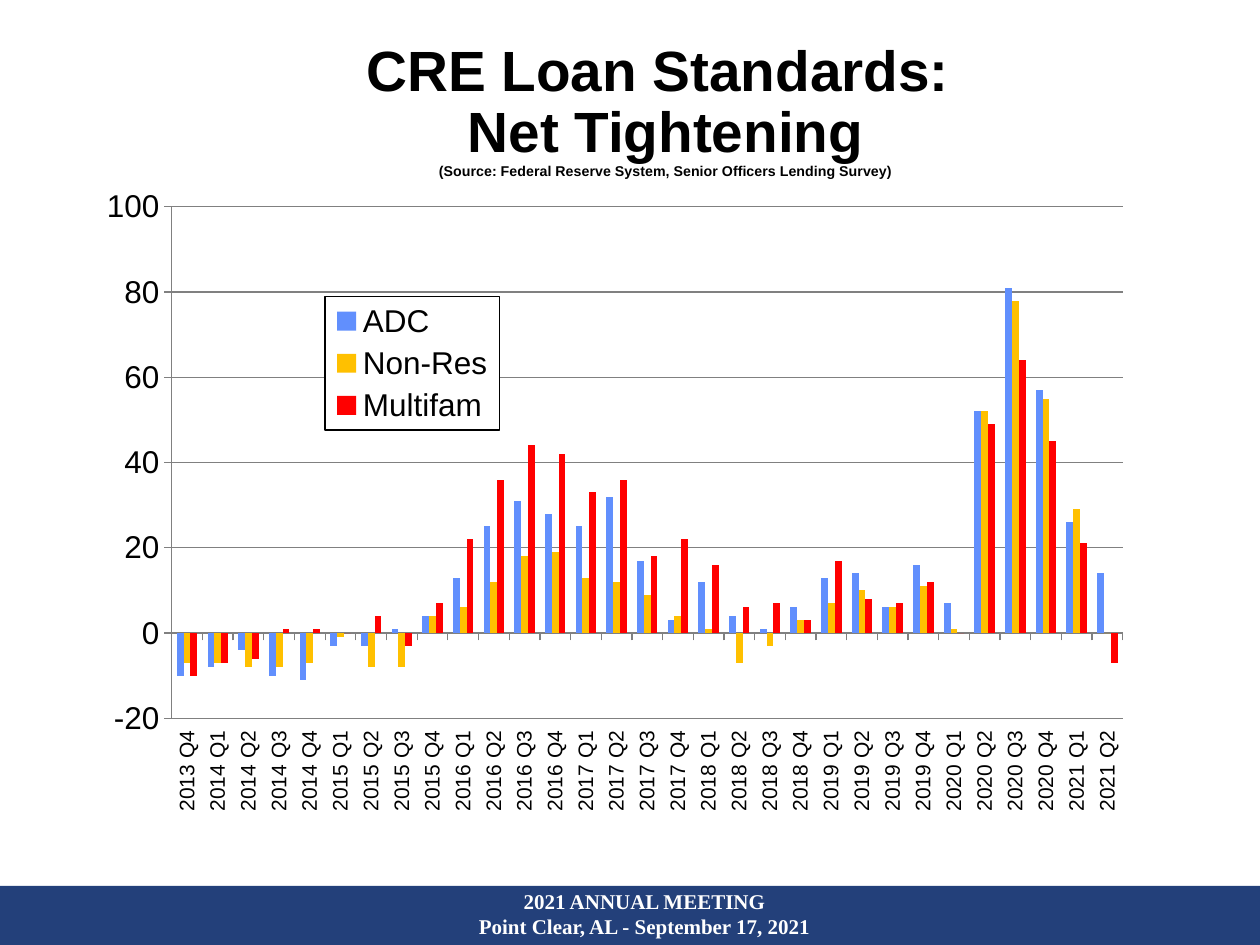
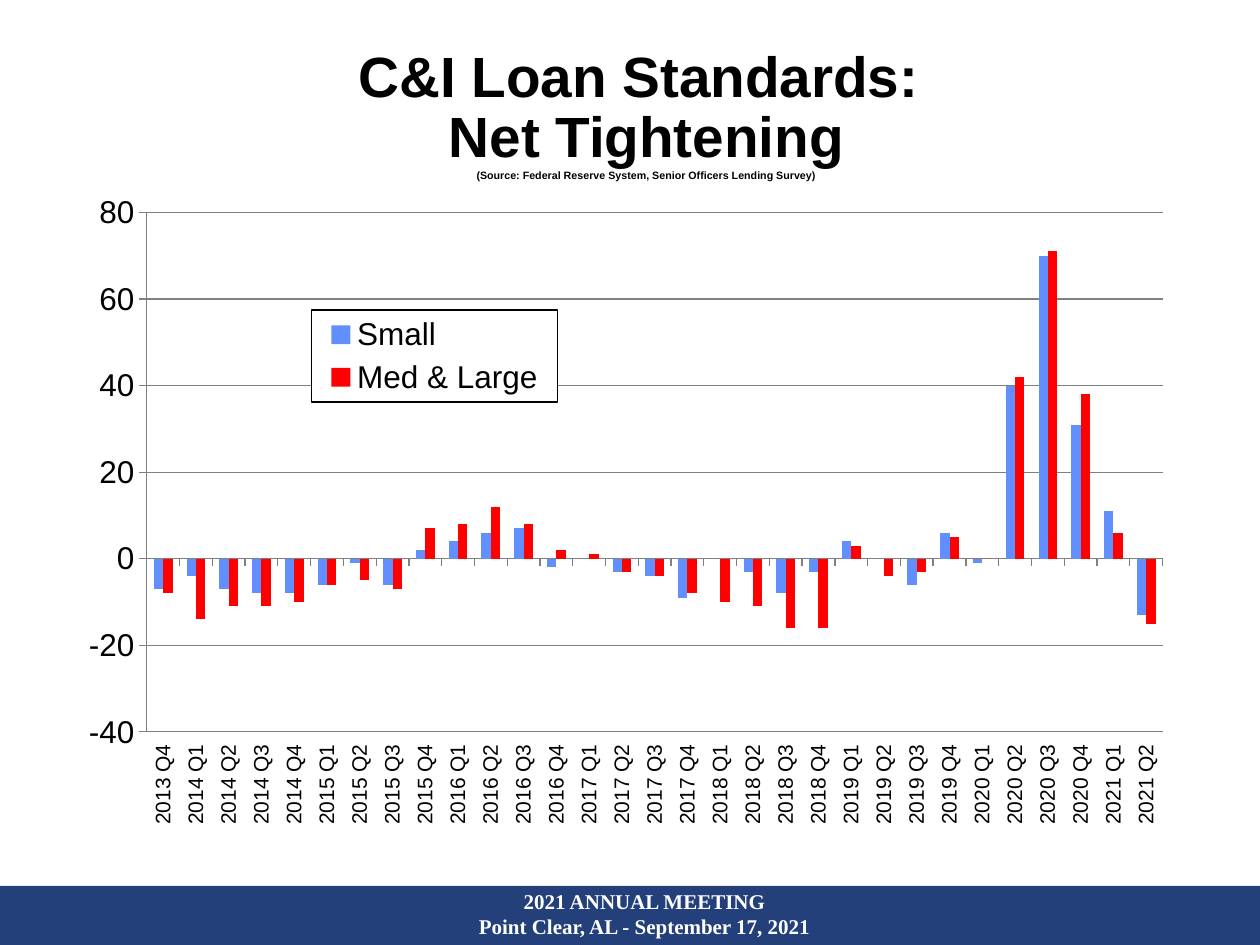
from dataclasses import dataclass

from lxml.etree import SubElement
from pptx import Presentation
from pptx.chart.data import CategoryChartData as ChartData
from pptx.dml.color import RGBColor as RGB
from pptx.enum.chart import XL_CHART_TYPE as Kind
from pptx.enum.chart import XL_LEGEND_POSITION as Side
from pptx.enum.chart import XL_TICK_LABEL_POSITION as Label
from pptx.enum.chart import XL_TICK_MARK as Tick
from pptx.enum.shapes import MSO_SHAPE as Shape
from pptx.enum.text import MSO_ANCHOR as Anchor
from pptx.enum.text import PP_ALIGN as Align
from pptx.oxml import parse_xml
from pptx.oxml.ns import nsdecls, qn
from pptx.util import Emu, Pt


@dataclass(frozen=True)
class Theme:
    """Colours, fonts and type sizes that the slides share."""
    ink: str = "000000"
    paper: str = "FFFFFF"
    band: str = "23407A"
    rule: str = "808080"
    blue: str = "618FFD"
    gold: str = "FFC000"
    red: str = "FF0000"
    sans: str = "Arial"
    serif: str = "Times New Roman"
    head: float = 32.4
    foot: int = 12
    key: int = 18
    tick: int = 12


THEME = Theme()
SCALE = 914400 / 126
WIDE, HIGH = 1260, 945
PLOT_X, PLOT_W, PLOT_H = 0.082, 0.888, 0.773
SOURCE = "(Source: Federal Reserve System, Senior Officers Lending Survey)"
FOOTER = ("2021 ANNUAL MEETING", "Point Clear, AL - September 17, 2021")
TERMS = [f"{year} Q{part}" for year in range(2013, 2022) for part in range(1, 5)][3:-2]

REAL = (
    ("ADC ", THEME.blue,
     (-10, -8, -4, -10, -11, -3, -3, 1, 4, 13, 25, 31, 28, 25, 32, 17, 3, 12, 4, 1,
      6, 13, 14, 6, 16, 7, 52, 81, 57, 26, 14)),
    ("Non-Res", THEME.gold,
     (-7, -7, -8, -8, -7, -1, -8, -8, 4, 6, 12, 18, 19, 13, 12, 9, 4, 1, -7, -3,
      3, 7, 10, 6, 11, 1, 52, 78, 55, 29, 0)),
    ("Multifam", THEME.red,
     (-10, -7, -6, 1, 1, 0, 4, -3, 7, 22, 36, 44, 42, 33, 36, 18, 22, 16, 6, 7,
      3, 17, 8, 7, 12, 0, 49, 64, 45, 21, -7)),
)
TRADE = (
    ("Small ", THEME.blue,
     (-7, -4, -7, -8, -8, -6, -1, -6, 2, 4, 6, 7, -2, 0, -3, -4, -9, 0, -3, -8,
      -3, 4, 0, -6, 6, -1, 40, 70, 31, 11, -13)),
    ("Med & Large", THEME.red,
     (-8, -14, -11, -11, -10, -6, -5, -7, 7, 8, 12, 8, 2, 1, -3, -4, -8, -10, -11, -16,
      -16, 3, -4, -3, 5, 0, 42, 71, 38, 6, -15)),
)


def px(*spans):
    """Turn px lengths into EMU."""
    return [Emu(round(span * SCALE)) for span in spans]


def style(font, size, name=THEME.sans, tint=THEME.ink, bold=False):
    """Set the face of a font."""
    font.size, font.name, font.bold = Pt(size), name, bold
    font.color.rgb = RGB.from_string(tint)


def add_box(slide, box):
    """Add a wrapping text box and return its frame."""
    frame = slide.shapes.add_textbox(*px(*box)).text_frame
    frame.word_wrap = True
    return frame


def add_run(para, text, *face, **more):
    """Add one styled run to a paragraph."""
    run = para.add_run()
    run.text = text
    style(run.font, *face, bold=True, **more)


def add_title(slide, box, topic, small):
    """Write the two title lines and the source line in a box."""
    frame = add_box(slide, box)
    frame.vertical_anchor = Anchor.MIDDLE
    para = frame.paragraphs[0]
    para.alignment, para.line_spacing = Align.CENTER, 0.89
    for line in (f"{topic} Loan Standards: ", "Net Tightening"):
        add_run(para, line, THEME.head)
        para.add_line_break()
    add_run(para, SOURCE, small)


def add_footer(slide, box):
    """Draw the band at the foot with the meeting name and place."""
    left, top, wide, high = box
    band = slide.shapes.add_shape(Shape.RECTANGLE, *px(*box))
    band.shadow.inherit = False
    band.fill.solid()
    band.fill.fore_color.rgb = RGB.from_string(THEME.band)
    band.line.fill.background()
    frame = add_box(slide, (left + 282, top - 4, wide - 535, high + 6))
    for row, text in enumerate(FOOTER):
        para = frame.add_paragraph() if row else frame.paragraphs[0]
        para.alignment = Align.CENTER
        add_run(para, text, THEME.foot, THEME.serif, THEME.paper)


def make_layout(parts, inner=False):
    """Build a manual chart layout from shares of the chart's size."""
    root = parse_xml(f"<c:layout {nsdecls('c')}/>")
    hand = SubElement(root, qn("c:manualLayout"))
    rules = [("layoutTarget", "inner")] if inner else []
    rules += [("xMode", "edge"), ("yMode", "edge")]
    rules += zip("xywh", (f"{part:.3f}" for part in parts))
    for tag, val in rules:
        SubElement(hand, qn(f"c:{tag}")).set("val", val)
    return root


def drop_layout(node):
    """Remove the layout that a chart part may hold."""
    for old in node.findall(qn("c:layout")):
        node.remove(old)


def place_plot(chart, top):
    """Fix the inner plot area."""
    area = chart._chartSpace.find(qn("c:chart")).find(qn("c:plotArea"))
    drop_layout(area)
    area.insert(0, make_layout((PLOT_X, top, PLOT_W, PLOT_H), True))


def place_key(chart, box, key):
    """Frame the legend and set it at an offset within the chart box."""
    chart.has_legend = True
    chart.legend.position = Side.RIGHT
    chart.legend.include_in_layout = False
    style(chart.legend.font, THEME.key)
    node = chart.legend._element
    drop_layout(node)
    over = node.find(qn("c:overlay"))
    over.addprevious(make_layout([key[i] / box[2 + i % 2] for i in range(4)]))
    over.addnext(parse_xml(
        f'<c:spPr {nsdecls("c", "a")}><a:solidFill><a:srgbClr val="{THEME.paper}"/></a:solidFill>'
        f'<a:ln w="9525"><a:solidFill><a:srgbClr val="{THEME.ink}"/></a:solidFill></a:ln></c:spPr>'))


def style_axes(chart, low, high):
    """Set the scale, ticks, rules and labels of both axes."""
    cat, val = chart.category_axis, chart.value_axis
    val.minimum_scale, val.maximum_scale, val.major_unit = low, high, 20
    val.has_major_gridlines = True
    cat.tick_label_position = Label.LOW
    for axis, size in ((cat, THEME.tick), (val, THEME.key)):
        axis.major_tick_mark, axis.minor_tick_mark = Tick.OUTSIDE, Tick.NONE
        style(axis.tick_labels.font, size)
    for part in (cat, val, val.major_gridlines):
        part.format.line.width = Pt(0.75)
        part.format.line.color.rgb = RGB.from_string(THEME.rule)
    body = cat._element.find(qn("c:txPr")).find(qn("a:bodyPr"))
    body.set("rot", "-5400000")
    body.set("vert", "horz")


def add_bars(slide, box, rows, key, low, high, top):
    """Chart the net tightening by quarter in a box."""
    data = ChartData()
    data.categories = TERMS
    for name, _, vals in rows:
        data.add_series(name, vals)
    chart = slide.shapes.add_chart(Kind.COLUMN_CLUSTERED, *px(*box), data).chart
    style(chart.font, THEME.key)
    chart.has_title = False
    plot = chart.plots[0]
    plot.gap_width, plot.overlap, plot.vary_by_categories = 150, 0, False
    for bar, (_, tint, _) in zip(plot.series, rows):
        bar.invert_if_negative = False
        bar.format.fill.solid()
        bar.format.fill.fore_color.rgb = RGB.from_string(tint)
    style_axes(chart, low, high)
    place_plot(chart, top)
    place_key(chart, box, key)


def add_page(deck, title, bars):
    """Add one slide with its footer, title and chart."""
    slide = deck.slides.add_slide(deck.slide_layouts[6])
    add_footer(slide, (0, 886, WIDE, 60))
    add_title(slide, *title)
    add_bars(slide, *bars)


def main():
    """Build and save the deck."""
    deck = Presentation()
    deck.slide_width, deck.slide_height = px(WIDE, HIGH)
    add_page(deck, ((210, 84, 911, 55), "CRE", 8.1),
             ((84, 179, 1071, 662), REAL, (241, 118, 175, 133), -20, 100, 0.042))
    add_page(deck, ((305, 94, 683, 42), "C&I", 6.1),
             ((53, 189, 1144, 672), TRADE, (258, 121, 246, 92), -40, 80, 0.035))
    deck.save("out.pptx")


if __name__ == "__main__":
    main()
